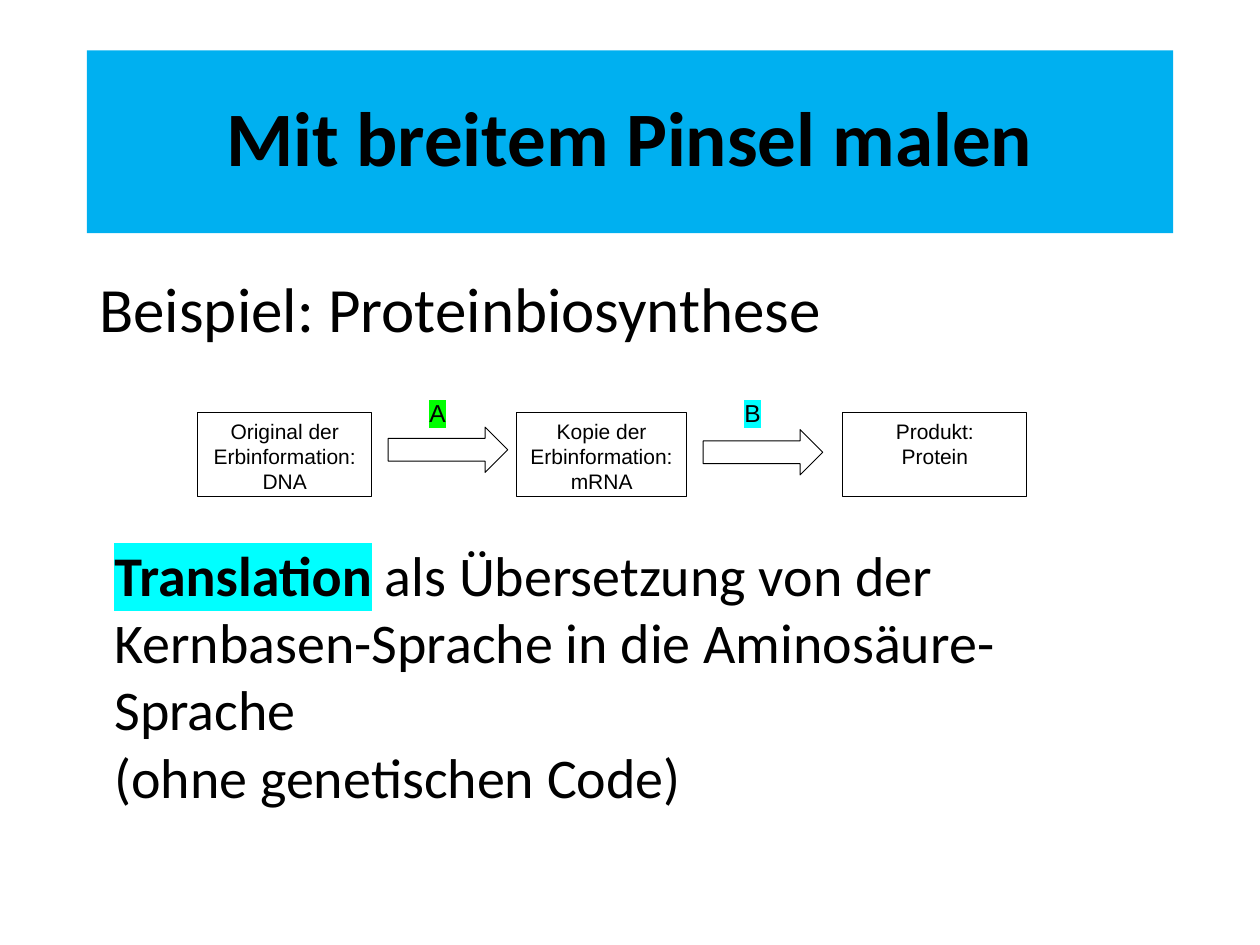
from lxml import etree
from pptx import Presentation
from pptx.dml.color import RGBColor
from pptx.enum.shapes import MSO_SHAPE
from pptx.enum.text import MSO_ANCHOR, PP_ALIGN
from pptx.oxml.ns import qn
from pptx.util import Inches, Pt

RECT, ARROW = MSO_SHAPE.RECTANGLE, MSO_SHAPE.RIGHT_ARROW
LEFT, MID = PP_ALIGN.LEFT, PP_ALIGN.CENTER
TOP, CENTER = MSO_ANCHOR.TOP, MSO_ANCHOR.MIDDLE

# Content: a paragraph is a list of (text, bold, highlight) runs or a string
COLORS = {"ink": "000000", "paper": "FFFFFF", "title": "00B0F0",
          "green": "00FF00", "cyan": "00FFFF"}
TITLE = "Mit breitem Pinsel malen"
INTRO = "Beispiel: Proteinbiosynthese"
STAGES = [  # left, width, paragraphs
    (1.57, 1.38, ["Original der Erbinformation: DNA"]),
    (4.1, 1.35, ["Kopie der Erbinformation:", "mRNA"]),
    (6.69, 1.46, ["Produkt:", "Protein"]),
]
STEPS = [("A", "green", 3.39), ("B", "cyan", 3.41)]  # label, mark, arrow top
NOTE = [
    [("Translation", True, "cyan"),
     (" als Übersetzung von der Kernbasen-Sprache in die Aminosäure-Sprache",
      False, None)],
    "(ohne genetischen Code)",
]
STAGE_TOP, STAGE_H = 3.27, 0.67
STEP_X, STEP_GAP = 3.08, 2.5


def color(name):
    return RGBColor.from_string(COLORS[name])


def write(shape, paras, size, font="Calibri", bold=False, align=LEFT,
          anchor=TOP, space=None):
    frame = shape.text_frame
    frame.word_wrap = True
    frame.vertical_anchor = anchor
    for i, runs in enumerate(paras):
        para = frame.paragraphs[0] if i == 0 else frame.add_paragraph()
        para.alignment = align
        if space:
            para.line_spacing = space
        if isinstance(runs, str):
            runs = [(runs, bold, None)]
        for text, heavy, mark in runs:
            run = para.add_run()
            run.text = text
            run.font.size, run.font.name = Pt(size), font
            run.font.bold = heavy
            run.font.color.rgb = color("ink")
            if mark:
                # The highlight must stand between fill and font
                tag = etree.Element(qn("a:highlight"))
                etree.SubElement(tag, qn("a:srgbClr"), val=COLORS[mark])
                run.font._element.find(qn("a:latin")).addprevious(tag)


def add_box(slide, kind, *place, fill=None):
    shape = slide.shapes.add_shape(kind, *map(Inches, place))
    shape.shadow.inherit = False
    if fill:
        shape.fill.solid()
        shape.fill.fore_color.rgb = color(fill)
    else:
        shape.fill.background()
    shape.line.color.rgb = color("ink")
    shape.line.width = Pt(0.5)
    return shape


def add_text(slide, *place):
    return slide.shapes.add_textbox(*map(Inches, place))


def main():
    deck = Presentation()
    deck.slide_width, deck.slide_height = Inches(10), Inches(7.5)
    slide = deck.slides.add_slide(deck.slide_layouts[5])

    # Title band
    title = slide.shapes.title
    title.left, title.top = Inches(0.69), Inches(0.4)
    title.width, title.height = Inches(8.62), Inches(1.45)
    title.fill.solid()
    title.fill.fore_color.rgb = color("title")
    write(title, [TITLE], 44, bold=True, align=MID, anchor=CENTER, space=0.9)

    # Introduction
    write(add_text(slide, 0.69, 2.09, 8.62, 0.71), [INTRO], 36)

    # Stages of the synthesis
    for left, width, paras in STAGES:
        box = add_box(slide, RECT, left, STAGE_TOP, width, STAGE_H,
                      fill="paper")
        write(box, paras, 12, font="Arial", align=MID)

    # Arrows with their labels
    for i, (label, mark, top) in enumerate(STEPS):
        left = STEP_X + i * STEP_GAP
        add_box(slide, ARROW, left, top, 0.95, 0.36)
        write(add_text(slide, left + 0.23, 3.11, 0.42, 0.42),
              [[(label, False, mark)]], 14, font="Arial")

    # Explanation
    write(add_text(slide, 0.81, 4.24, 8.39, 2.26), NOTE, 32)

    deck.save("out.pptx")


if __name__ == "__main__":
    main()
